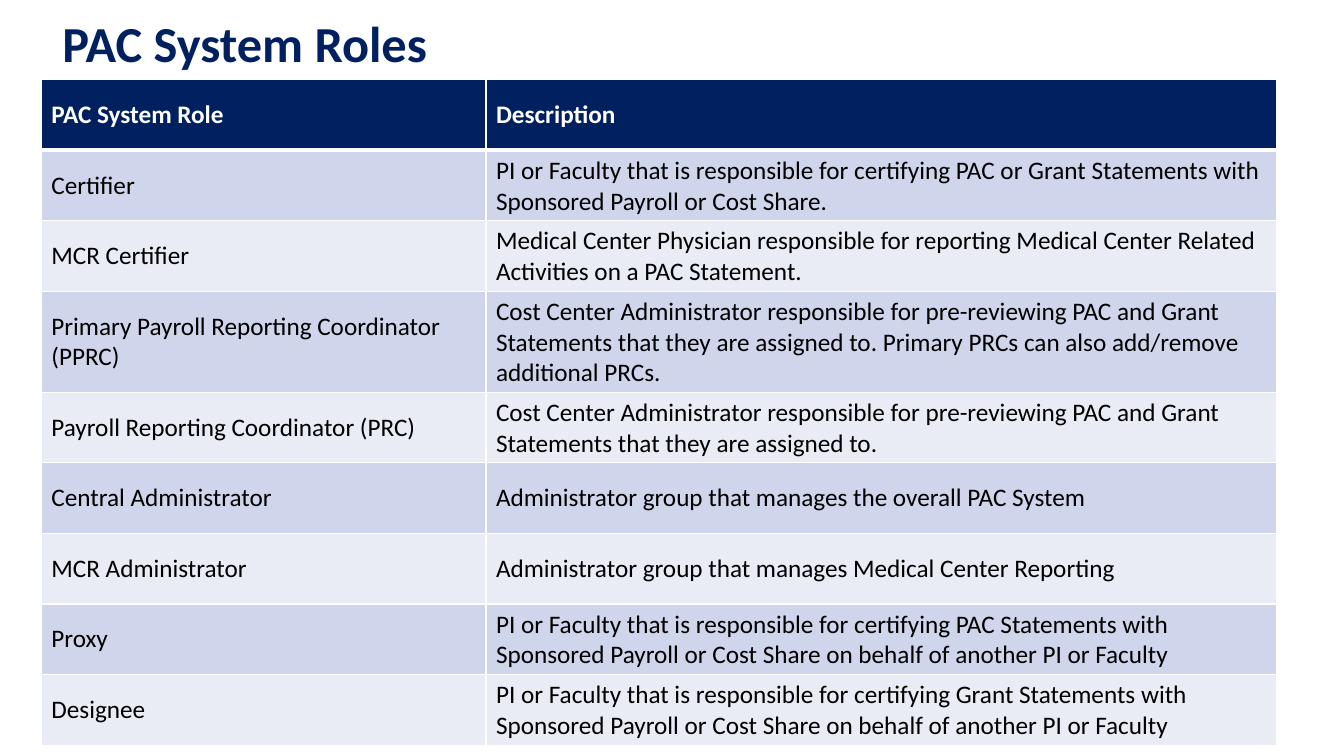
from dataclasses import dataclass

from lxml.etree import SubElement
from pptx import Presentation
from pptx.dml.color import RGBColor
from pptx.enum.text import MSO_ANCHOR
from pptx.oxml.ns import qn
from pptx.util import Inches, Pt


@dataclass(frozen=True)
class Theme:
    """Colours and type sizes of the slide."""
    font: str = "Calibri"
    navy: str = "002060"
    white: str = "FFFFFF"
    black: str = "000000"
    bands: tuple = ("CFD5EA", "E9EBF5")
    head: int = 36
    body: int = 18
    thin: int = 1
    thick: int = 3


THEME = Theme()
WIDTH, HEIGHT = 13.33, 7.5
TITLE_BOX = (0.52, 0.12, 11.83, 0.67)
TABLE_BOX = (0.41, 0.79, 12.25, 6.51)
ROLE_SHARE = 0.36
ROW, TALL = 0.7, 0.91
TALL_ROLE = "Primary Payroll Reporting Coordinator (PPRC)"
ROLES = [
    ("PAC System Role", "Description"),
    ("Certifier", "PI or Faculty that is responsible for certifying PAC or Grant "
     "Statements with Sponsored Payroll or Cost Share."),
    ("MCR Certifier", "Medical Center Physician responsible for reporting Medical "
     "Center Related Activities on a PAC Statement."),
    (TALL_ROLE, "Cost Center Administrator responsible for pre-reviewing PAC and "
     "Grant Statements that they are assigned to. Primary PRCs can also add/remove "
     "additional PRCs."),
    ("Payroll Reporting Coordinator (PRC)", "Cost Center Administrator responsible "
     "for pre-reviewing PAC and Grant Statements that they are assigned to."),
    ("Central Administrator", "Administrator group that manages the overall PAC System"),
    ("MCR Administrator", "Administrator group that manages Medical Center Reporting"),
    ("Proxy", "PI or Faculty that is responsible for certifying PAC Statements with "
     "Sponsored Payroll or Cost Share on behalf of another PI or Faculty"),
    ("Designee", "PI or Faculty that is responsible for certifying Grant Statements "
     "with Sponsored Payroll or Cost Share on behalf of another PI or Faculty"),
]


def style(para, size, color, bold):
    """Set the font of a paragraph."""
    font = para.font
    font.name, font.size, font.bold = THEME.font, Pt(size), bold
    font.color.rgb = RGBColor.from_string(color)


def border(cell, top, bottom):
    """Draw white lines around a cell."""
    props = cell._tc.get_or_add_tcPr()
    sides = {"lnL": THEME.thin, "lnR": THEME.thin, "lnT": top, "lnB": bottom}
    for side, width in sides.items():
        line = SubElement(props, qn(f"a:{side}"), w=str(Pt(width)))
        fill = SubElement(line, qn("a:solidFill"))
        SubElement(fill, qn("a:srgbClr"), val=THEME.white)


def add_title(slide, box, text):
    """Place the slide title in its box."""
    frame = slide.shapes.add_textbox(*map(Inches, box)).text_frame
    frame.word_wrap = True
    frame.vertical_anchor = MSO_ANCHOR.MIDDLE
    para = frame.paragraphs[0]
    para.text = text
    para.line_spacing = 0.9
    style(para, THEME.head, THEME.navy, True)


def fill_cell(cell, text, row):
    """Write and colour one cell of the given row."""
    head = row == 0
    border(cell, THEME.thick if row == 1 else THEME.thin,
           THEME.thick if head else THEME.thin)
    cell.fill.solid()
    color = THEME.navy if head else THEME.bands[(row - 1) % 2]
    cell.fill.fore_color.rgb = RGBColor.from_string(color)
    cell.vertical_anchor = MSO_ANCHOR.MIDDLE
    cell.text = text
    style(cell.text_frame.paragraphs[0], THEME.body,
          THEME.white if head else THEME.black, head)


def add_roles(slide, box, roles):
    """Place the table of roles in its box."""
    table = slide.shapes.add_table(len(roles), 2, *map(Inches, box)).table
    for col, share in zip(table.columns, (ROLE_SHARE, 1 - ROLE_SHARE)):
        col.width = Inches(box[2] * share)
    for row, texts in enumerate(roles):
        table.rows[row].height = Inches(TALL if texts[0] == TALL_ROLE else ROW)
        for col, text in enumerate(texts):
            fill_cell(table.cell(row, col), text, row)


def main():
    """Build and save the slide."""
    deck = Presentation()
    deck.slide_width, deck.slide_height = Inches(WIDTH), Inches(HEIGHT)
    slide = deck.slides.add_slide(deck.slide_layouts[6])
    add_title(slide, TITLE_BOX, "PAC System Roles")
    add_roles(slide, TABLE_BOX, ROLES)
    deck.save("out.pptx")


if __name__ == "__main__":
    main()
